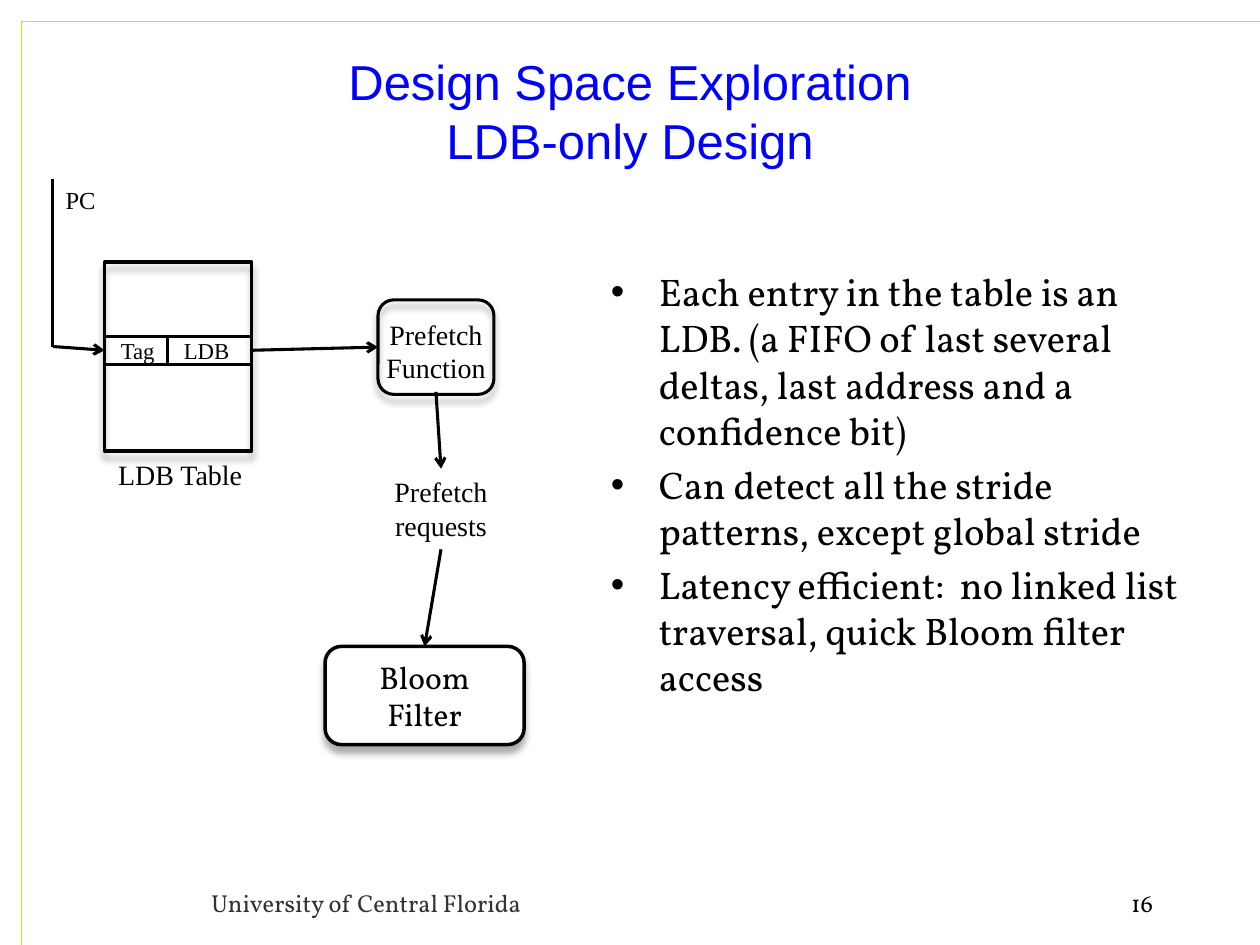
from dataclasses import dataclass
from lxml.etree import SubElement
from pptx import Presentation
from pptx.dml.color import RGBColor
from pptx.enum.shapes import MSO_CONNECTOR, MSO_SHAPE
from pptx.enum.text import MSO_ANCHOR, PP_ALIGN
from pptx.oxml.ns import qn
from pptx.util import Inches, Pt


@dataclass(frozen=True)
class Theme:
    head: str = "Arial"
    body: str = "Vollkorn"
    label: str = "Times New Roman"
    blue: str = "0000FF"
    black: str = "000000"
    gray: str = "333333"
    gold: str = "FFCC00"
    white: str = "FFFFFF"
    shade: str = "ADADAD"
    title: int = 28
    point: int = 22
    filter: int = 18
    name: int = 16
    small: int = 14
    cell: int = 13
    stroke: float = 1.75


TOP, LEFT, BOTTOM, RIGHT = range(4)


class Sketch:
    def __init__(self, slide, theme):
        self.slide, self.theme = slide, theme

    def letter(self, shape, lines, size, font, color=None, align=PP_ALIGN.LEFT,
               anchor=MSO_ANCHOR.TOP, wrap=True, bullet=False):
        """Put styled paragraphs into a shape."""
        frame = shape.text_frame
        frame.word_wrap = wrap
        frame.vertical_anchor = anchor
        for i, line in enumerate(lines):
            par = frame.paragraphs[0] if i == 0 else frame.add_paragraph()
            par.text = line
            par.alignment = align
            if bullet:
                props = par._p.get_or_add_pPr()
                props.set("marL", str(Inches(0.38)))
                props.set("indent", str(Inches(-0.38)))
                if i:
                    par.space_before = Pt(size * 0.2)
                SubElement(props, qn("a:buFont"), typeface="Arial")
                SubElement(props, qn("a:buChar"), char="•")
            par.font.size = Pt(size)
            par.font.name = font
            par.font.color.rgb = RGBColor.from_string(color or self.theme.black)

    def text(self, at, lines, size, font, **style):
        box = self.slide.shapes.add_textbox(*map(Inches, at))
        self.letter(box, lines, size, font, **style)
        return box

    def label(self, at, line, size, **style):
        return self.text(at, [line], size, self.theme.label,
                         align=PP_ALIGN.CENTER, **style)

    def box(self, kind, at, width=None, fill=None, shadow=False):
        shape = self.slide.shapes.add_shape(kind, *map(Inches, at))
        shape.shadow.inherit = False
        if fill:
            shape.fill.solid()
            shape.fill.fore_color.rgb = RGBColor.from_string(fill)
        else:
            shape.fill.background()
        shape.line.color.rgb = RGBColor.from_string(self.theme.black)
        shape.line.width = Pt(width or self.theme.stroke)
        if shadow:
            effects = shape._element.spPr.find(qn("a:effectLst"))
            cast = SubElement(effects, qn("a:outerShdw"), blurRad=str(Pt(4)),
                              dist=str(Pt(4)), dir="5400000", rotWithShape="0")
            SubElement(cast, qn("a:srgbClr"), val=self.theme.shade)
        return shape

    def cell(self, at, line):
        shape = self.box(MSO_SHAPE.RECTANGLE, at)
        self.letter(shape, [line], self.theme.cell, self.theme.label,
                    anchor=MSO_ANCHOR.MIDDLE, wrap=False)
        frame = shape.text_frame
        frame.margin_left = Inches(0.13)
        frame.margin_top = frame.margin_right = frame.margin_bottom = 0
        return shape

    def line(self, start, end, color=None, width=None, arrow=False):
        """Draw a line; each end is an (x, y) point or a (shape, side) pair."""
        ends = [start, end]
        spots = [(0, 0) if hasattr(e[0], "shape_id") else e for e in ends]
        link = self.slide.shapes.add_connector(
            MSO_CONNECTOR.STRAIGHT, *(Inches(v) for spot in spots for v in spot))
        for e, join in zip(ends, (link.begin_connect, link.end_connect)):
            if hasattr(e[0], "shape_id"):
                join(*e)
        link.line.color.rgb = RGBColor.from_string(color or self.theme.black)
        link.line.width = Pt(width or self.theme.stroke)
        props = link._element.spPr
        if arrow:
            SubElement(props.find(qn("a:ln")), qn("a:tailEnd"), type="arrow")
        SubElement(props, qn("a:effectLst"))

    def arrow(self, start, end):
        self.line(start, end, arrow=True)


def main():
    deck = Presentation()
    deck.slide_width, deck.slide_height = Inches(10), Inches(7.5)
    look = Theme()
    art = Sketch(deck.slides.add_slide(deck.slide_layouts[6]), look)

    corner = (0.17, 0.17)
    art.line(corner, (0.17, 7.5), look.gold, 0.75)
    art.line(corner, (10, 0.17), look.gold, 1)
    art.text((0.25, 0.5, 9.5, 0.75),
             ["Design Space Exploration\vLDB-only Design"],
             look.title, look.head, color=look.blue,
             align=PP_ALIGN.CENTER, anchor=MSO_ANCHOR.MIDDLE)
    art.text((4.75, 2.08, 4.75, 4.25), [
        "Each entry in the table is an LDB. (a FIFO of last several deltas, "
        "last address and a confidence bit)",
        "Can detect all the stride patterns, except global stride",
        "Latency efficient:  no linked list traversal, quick Bloom filter access",
    ], look.point, look.body, bullet=True)
    art.text((1.58, 7, 6.83, 0.33), ["University of Central Florida"],
             look.small, look.body, color=look.gray)
    art.text((8.33, 7, 0.92, 0.33), ["16"], look.small, look.body,
             align=PP_ALIGN.RIGHT)

    # LDB table
    art.box(MSO_SHAPE.RECTANGLE, (0.83, 2.08, 1.17, 1.5), shadow=True)
    tag = art.cell((0.83, 2.67, 0.5, 0.22), "Tag")
    ldb = art.cell((1.33, 2.67, 0.67, 0.22), "LDB")
    bend = (0.42, 2.75)
    art.line((0.42, 1.42), bend)
    art.arrow(bend, (tag, LEFT))
    art.label((0.42, 1.42, 0.44, 0.34), "PC", look.small, wrap=False)
    art.label((0.83, 3.58, 1.2, 0.37), "LDB Table", look.name, wrap=False)

    # Prefetch path
    frame = art.box(MSO_SHAPE.ROUNDED_RECTANGLE, (3, 2.38, 0.92, 0.75),
                    shadow=True)
    func = art.label((2.92, 2.47, 1.08, 0.64), "Prefetch Function", look.name)
    asks = art.label((3, 3.72, 1, 0.64), "Prefetch requests", look.name)
    bloom = art.box(MSO_SHAPE.ROUNDED_RECTANGLE, (2.58, 5.13, 1.58, 0.78),
                    width=2, fill=look.white, shadow=True)
    art.letter(bloom, ["Bloom Filter"], look.filter, look.body,
               align=PP_ALIGN.CENTER, anchor=MSO_ANCHOR.MIDDLE)
    art.arrow((ldb, RIGHT), (frame, LEFT))
    art.arrow((func, BOTTOM), (asks, TOP))
    art.arrow((asks, BOTTOM), (bloom, TOP))

    deck.save("out.pptx")


if __name__ == "__main__":
    main()
